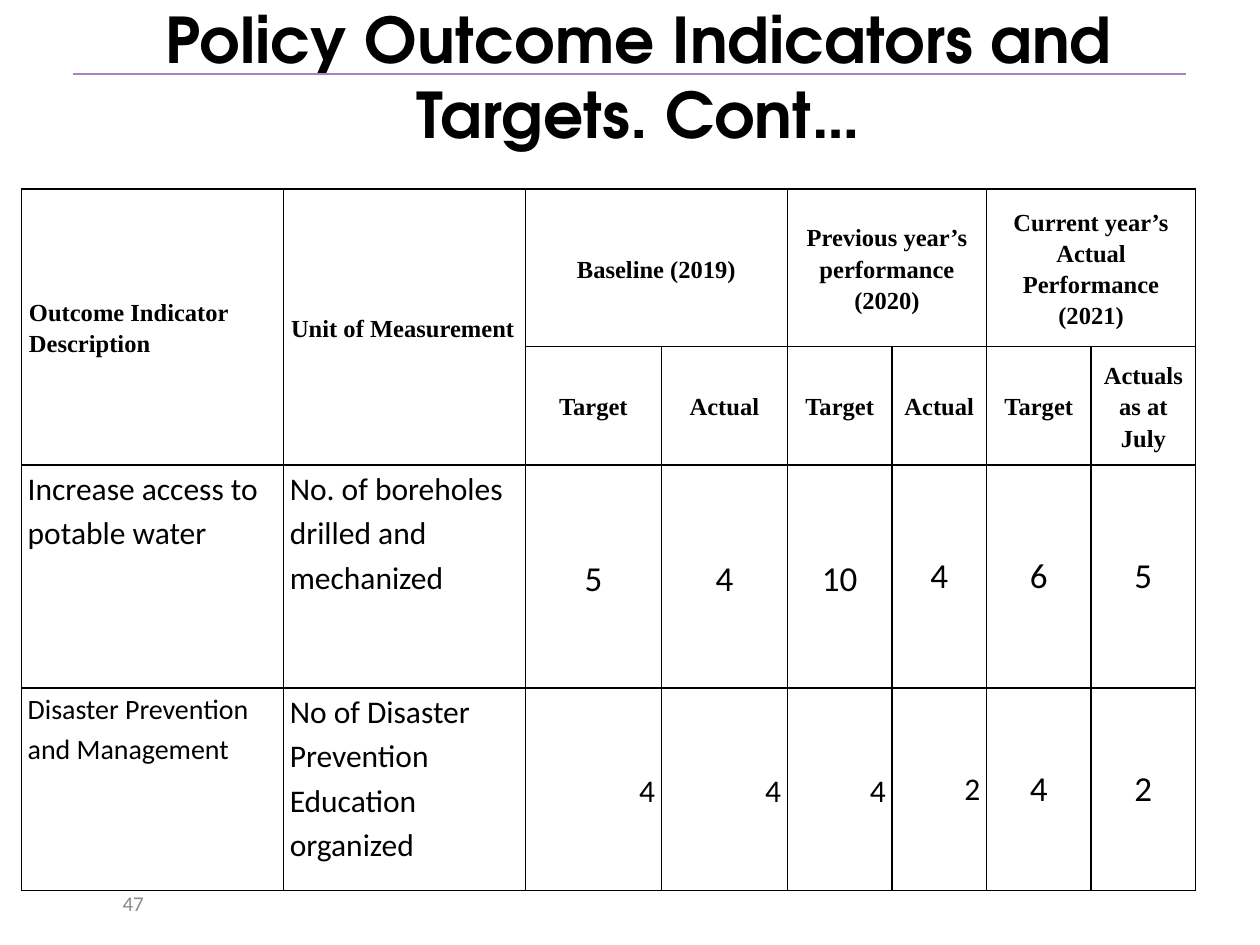
from dataclasses import dataclass

import pptx
import pptx.dml.color
import pptx.enum.shapes
import pptx.enum.text
import pptx.oxml
import pptx.oxml.ns
import pptx.util
from pptx.util import Inches, Pt

RGB = pptx.dml.color.RGBColor.from_string
ALIGN = pptx.enum.text.PP_ALIGN
ANCHOR = pptx.enum.text.MSO_ANCHOR


@dataclass(frozen=True)
class Theme:
    ink: str = "000000"
    paper: str = "FFFFFF"
    rule: str = "AA7FC3"
    muted: str = "8C8C8C"
    title_font: str = "TeX Gyre Adventor"
    head_font: str = "Times New Roman"
    body_font: str = "Calibri"
    title: int = 36
    head: int = 14
    small: int = 16
    body: int = 18
    value: int = 20
    page: int = 12
    line: int = 1


THEME = Theme()


@dataclass(frozen=True)
class Cell:
    row: int
    col: int
    text: str
    size: int = THEME.body
    align: ALIGN = ALIGN.LEFT
    anchor: ANCHOR = ANCHOR.MIDDLE
    space: float = 1.15
    inset: float = 0.05
    head: bool = False
    rows: int = 1
    cols: int = 1


def heading(row: int, col: int, text: str, align=ALIGN.CENTER, rows=1, cols=1) -> Cell:
    return Cell(row, col, text, THEME.head, align, inset=0.06,
                head=True, rows=rows, cols=cols)


def label(row: int, col: int, text: str, size: int = THEME.body) -> Cell:
    return Cell(row, col, text, size, anchor=ANCHOR.TOP)


def value(row: int, col: int, text: str, size=THEME.value, align=ALIGN.CENTER) -> Cell:
    """Columns from 5 on use single spacing, and from 6 on a tighter inset."""
    return Cell(row, col, text, size, align, space=1.15 if col < 5 else 1.0,
                inset=0.05 if col < 6 else 0.04)


WIDTHS = (2.08, 1.92, 1.08, 1, 0.83, 0.75, 0.83, 0.83)
HEIGHTS = (1.25, 0.94, 1.77, 1.61)
GROUPS = ("Baseline (2019)", "Previous year’s performance (2020)",
          "Current year’s Actual Performance (2021)")
MEASURES = ("Target", "Actual", "Target", "Actual", "Target", "Actuals as at July")
CELLS = [
    heading(0, 0, "Outcome Indicator Description", ALIGN.LEFT, rows=2),
    heading(0, 1, "Unit of Measurement", ALIGN.LEFT, rows=2),
    *(heading(0, 2 + 2 * i, text, cols=2) for i, text in enumerate(GROUPS)),
    *(heading(1, i, text) for i, text in enumerate(MEASURES, 2)),
    label(2, 0, "Increase access to potable water"),
    label(2, 1, "No. of boreholes drilled and mechanized"),
    *(value(2, i, text) for i, text in enumerate(("5", "4", "10", "4", "6", "5"), 2)),
    label(3, 0, "Disaster Prevention and Management", THEME.small),
    label(3, 1, "No of Disaster Prevention Education organized"),
    *(value(3, i, text, THEME.body, ALIGN.RIGHT)
      for i, text in enumerate(("4", "4", "4", "2"), 2)),
    *(value(3, i, text) for i, text in enumerate(("4", "2"), 6)),
]


def style(para, font: str, size: int, color: str, align: ALIGN, bold=False) -> None:
    para.alignment = align
    para.font.name = font
    para.font.size = Pt(size)
    para.font.bold = bold
    para.font.color.rgb = RGB(color)


def border(cell) -> None:
    props = cell._tc.get_or_add_tcPr()
    for side in "LRTB":
        props.append(pptx.oxml.parse_xml(
            f'<a:ln{side} {pptx.oxml.ns.nsdecls("a")} w="{Pt(THEME.line)}">'
            f'<a:solidFill><a:srgbClr val="{THEME.ink}"/></a:solidFill></a:ln{side}>'))


def draw_rule(slide) -> None:
    rule = slide.shapes.add_connector(
        pptx.enum.shapes.MSO_CONNECTOR.STRAIGHT,
        Inches(0.58), Inches(0.59), Inches(9.41), Inches(0.59))
    rule.line.color.rgb = RGB(THEME.rule)
    rule.line.width = Pt(THEME.line)
    rule._element.spPr.append(
        pptx.oxml.parse_xml(f'<a:effectLst {pptx.oxml.ns.nsdecls("a")}/>'))


def place(shape, left: float, top: float, width: float, height: float) -> None:
    shape.left, shape.top = Inches(left), Inches(top)
    shape.width, shape.height = Inches(width), Inches(height)


def draw_title(slide) -> None:
    title = slide.shapes.title
    place(title, 0.78, 0, 8.58, 1.17)
    frame = title.text_frame
    frame.text = "Policy Outcome Indicators and Targets. Cont…"
    frame.word_wrap = True
    frame.auto_size = pptx.enum.text.MSO_AUTO_SIZE.NONE
    frame.vertical_anchor = ANCHOR.TOP
    frame.margin_left = frame.margin_right = 0
    frame.margin_top = frame.margin_bottom = 0
    style(frame.paragraphs[0], THEME.title_font, THEME.title, THEME.ink,
          ALIGN.CENTER, True)


def draw_page(slide) -> None:
    box = slide.shapes.add_textbox(
        Inches(0.79), Inches(7.07), Inches(0.45), Inches(0.2))
    frame = box.text_frame
    frame.text = "47"
    frame.word_wrap = True
    frame.vertical_anchor = ANCHOR.MIDDLE
    frame.margin_top = frame.margin_bottom = 0
    style(frame.paragraphs[0], THEME.body_font, THEME.page, THEME.muted, ALIGN.RIGHT)


def fill_cell(table, item: Cell) -> None:
    cell = table.cell(item.row, item.col)
    if item.rows > 1 or item.cols > 1:
        cell.merge(table.cell(item.row + item.rows - 1, item.col + item.cols - 1))
    cell.text = item.text
    cell.vertical_anchor = item.anchor
    cell.margin_left = cell.margin_right = Inches(item.inset)
    cell.margin_top = cell.margin_bottom = 0
    para = cell.text_frame.paragraphs[0]
    para.line_spacing = item.space
    font = THEME.head_font if item.head else THEME.body_font
    style(para, font, item.size, THEME.ink, item.align, item.head)


def draw_table(slide) -> None:
    table = slide.shapes.add_table(
        len(HEIGHTS), len(WIDTHS), Inches(0.17), Inches(1.5),
        Inches(sum(WIDTHS)), Inches(sum(HEIGHTS))).table
    table.first_row = table.horz_banding = False
    for col, width in zip(table.columns, WIDTHS):
        col.width = Inches(width)
    for row, height in zip(table.rows, HEIGHTS):
        row.height = Inches(height)
    for cell in table.iter_cells():
        border(cell)
        cell.fill.solid()
        cell.fill.fore_color.rgb = RGB(THEME.paper)
    for item in CELLS:
        fill_cell(table, item)


def main() -> None:
    deck = pptx.Presentation()
    deck.slide_width, deck.slide_height = Inches(10), Inches(7.5)
    slide = deck.slides.add_slide(deck.slide_layouts.get_by_name("Title Only"))
    draw_rule(slide)
    draw_page(slide)
    draw_title(slide)
    draw_table(slide)
    deck.save("out.pptx")


if __name__ == "__main__":
    main()
